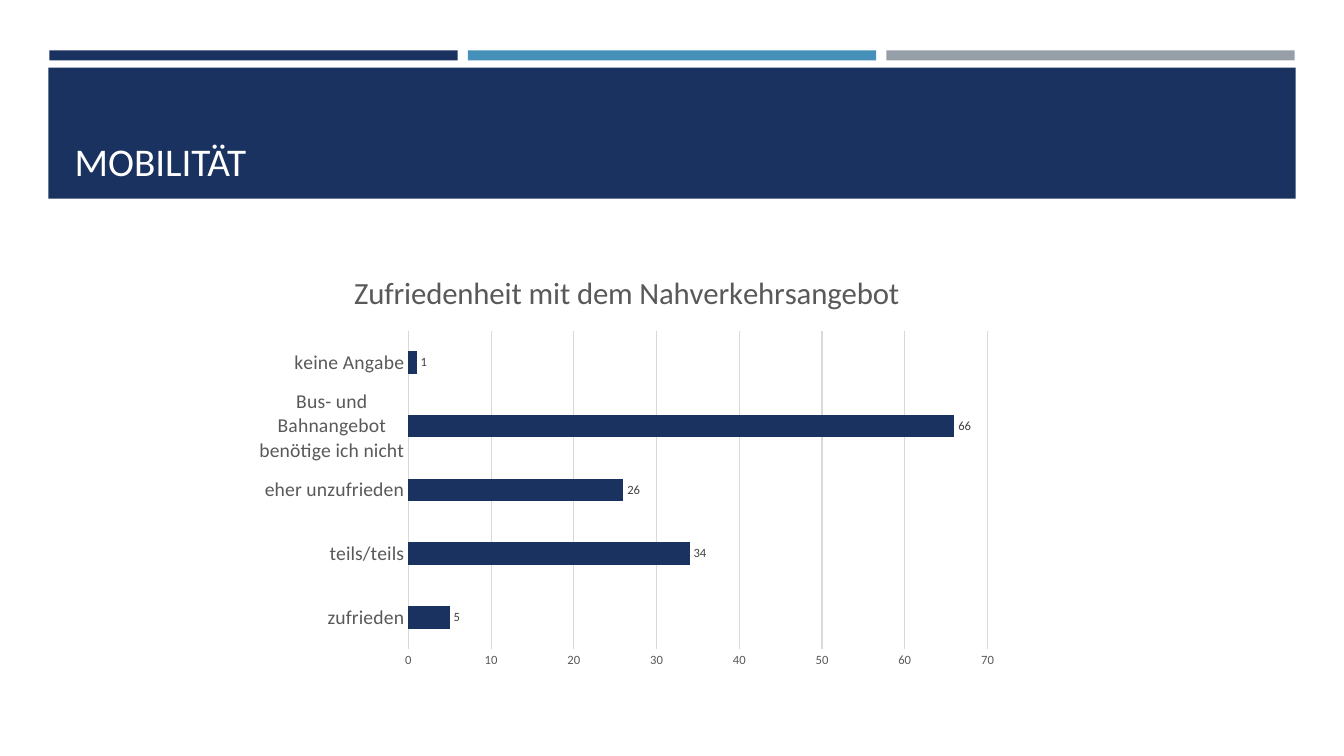
from dataclasses import dataclass

from pptx import Presentation
from pptx.chart.data import CategoryChartData
from pptx.dml.color import RGBColor
from pptx.enum.chart import XL_CHART_TYPE, XL_LABEL_POSITION, XL_TICK_MARK
from pptx.enum.shapes import MSO_SHAPE
from pptx.enum.text import MSO_ANCHOR, PP_ALIGN
from pptx.util import Inches, Pt

RECTANGLE = MSO_SHAPE.RECTANGLE
BAR_CLUSTERED = XL_CHART_TYPE.BAR_CLUSTERED
OUTSIDE_END = XL_LABEL_POSITION.OUTSIDE_END
NO_TICKS = XL_TICK_MARK.NONE
BOTTOM = MSO_ANCHOR.BOTTOM
LEFT = PP_ALIGN.LEFT

NAVY, BLUE, GREY = "1A3260", "4590B8", "969FA7"
WHITE, BLACK, TEXT_GREY, LABEL_GREY, LINE_GREY = "FFFFFF", "000000", "595959", "404040", "D9D9D9"
FONT = "Calibri"

SATISFACTION = {
    "zufrieden": 5,
    "teils/teils": 34,
    "eher unzufrieden": 26,
    "Bus- und Bahnangebot benötige ich nicht": 66,
    "keine Angabe": 1,
}


@dataclass(frozen=True)
class Band:
    left: float
    top: float
    width: float
    height: float
    color: str


STRIPE_STEP = 4.15
BANDS = [
    Band(0.49 + i * STRIPE_STEP, 0.5, 4.05, 0.1, color)
    for i, color in enumerate((NAVY, BLUE, GREY))
] + [Band(0.48, 0.67, 12.37, 1.3, NAVY)]


def rgb(hex_color: str) -> RGBColor:
    return RGBColor.from_string(hex_color)


def format_font(font, size: float, color: str) -> None:
    values = {"name": FONT, "size": Pt(size), "bold": False}
    for attribute, value in values.items():
        setattr(font, attribute, value)
    font.color.rgb = rgb(color)


def format_line(line) -> None:
    line.color.rgb = rgb(LINE_GREY)
    line.width = Pt(0.75)


def add_band(slide, band: Band) -> None:
    stripe = slide.shapes.add_shape(
        RECTANGLE, Inches(band.left), Inches(band.top), Inches(band.width), Inches(band.height)
    )
    stripe.shadow.inherit = False
    stripe.fill.solid()
    stripe.fill.fore_color.rgb = rgb(band.color)
    stripe.line.fill.background()


def write_heading(slide) -> None:
    heading = slide.shapes.title
    place = {"left": 0.64, "top": 0.77, "width": 12.06, "height": 1.11}
    for attribute, value in place.items():
        setattr(heading, attribute, Inches(value))
    heading.text_frame.text = "MOBILITÄT"
    heading.text_frame.vertical_anchor = BOTTOM
    paragraph = heading.text_frame.paragraphs[0]
    paragraph.alignment = LEFT
    format_font(paragraph.runs[0].font, 28, WHITE)
    # Bring the heading in front of the navy band
    heading.element.getparent().append(heading.element)


def add_satisfaction_chart(slide) -> None:
    data = CategoryChartData()
    data.categories = list(SATISFACTION)
    data.add_series("Series 1", list(SATISFACTION.values()))
    chart = slide.shapes.add_chart(
        BAR_CLUSTERED, Inches(2.42), Inches(2.5), Inches(7.59), Inches(4.21), data
    ).chart
    format_font(chart.font, 10, BLACK)
    chart.has_legend = False

    # Chart title
    chart.has_title = True
    chart_title = chart.chart_title.text_frame
    chart_title.text = "Zufriedenheit mit dem Nahverkehrsangebot"
    format_font(chart_title.paragraphs[0].runs[0].font, 22, TEXT_GREY)

    # Axes
    for axis, size in ((chart.category_axis, 14), (chart.value_axis, 9)):
        axis.major_tick_mark = NO_TICKS
        axis.minor_tick_mark = NO_TICKS
        format_font(axis.tick_labels.font, size, TEXT_GREY)
    format_line(chart.category_axis.format.line)
    counts = chart.value_axis
    counts.format.line.fill.background()
    counts.has_major_gridlines = True
    format_line(counts.major_gridlines.format.line)
    scale = {"minimum_scale": 0, "maximum_scale": 70, "major_unit": 10}
    for attribute, value in scale.items():
        setattr(counts, attribute, value)

    # Bars and their values
    plot = chart.plots[0]
    plot.gap_width = 182
    plot.vary_by_categories = False
    answers = plot.series[0]
    answers.format.fill.solid()
    answers.format.fill.fore_color.rgb = rgb(NAVY)
    labels = answers.data_labels
    labels.show_value = True
    labels.position = OUTSIDE_END
    format_font(labels.font, 9, LABEL_GREY)


def main() -> None:
    presentation = Presentation()
    presentation.slide_width = Inches(13.33)
    presentation.slide_height = Inches(7.5)
    title_only = presentation.slide_layouts[5]
    slide = presentation.slides.add_slide(title_only)
    for band in BANDS:
        add_band(slide, band)
    write_heading(slide)
    add_satisfaction_chart(slide)
    presentation.save("out.pptx")


if __name__ == "__main__":
    main()
